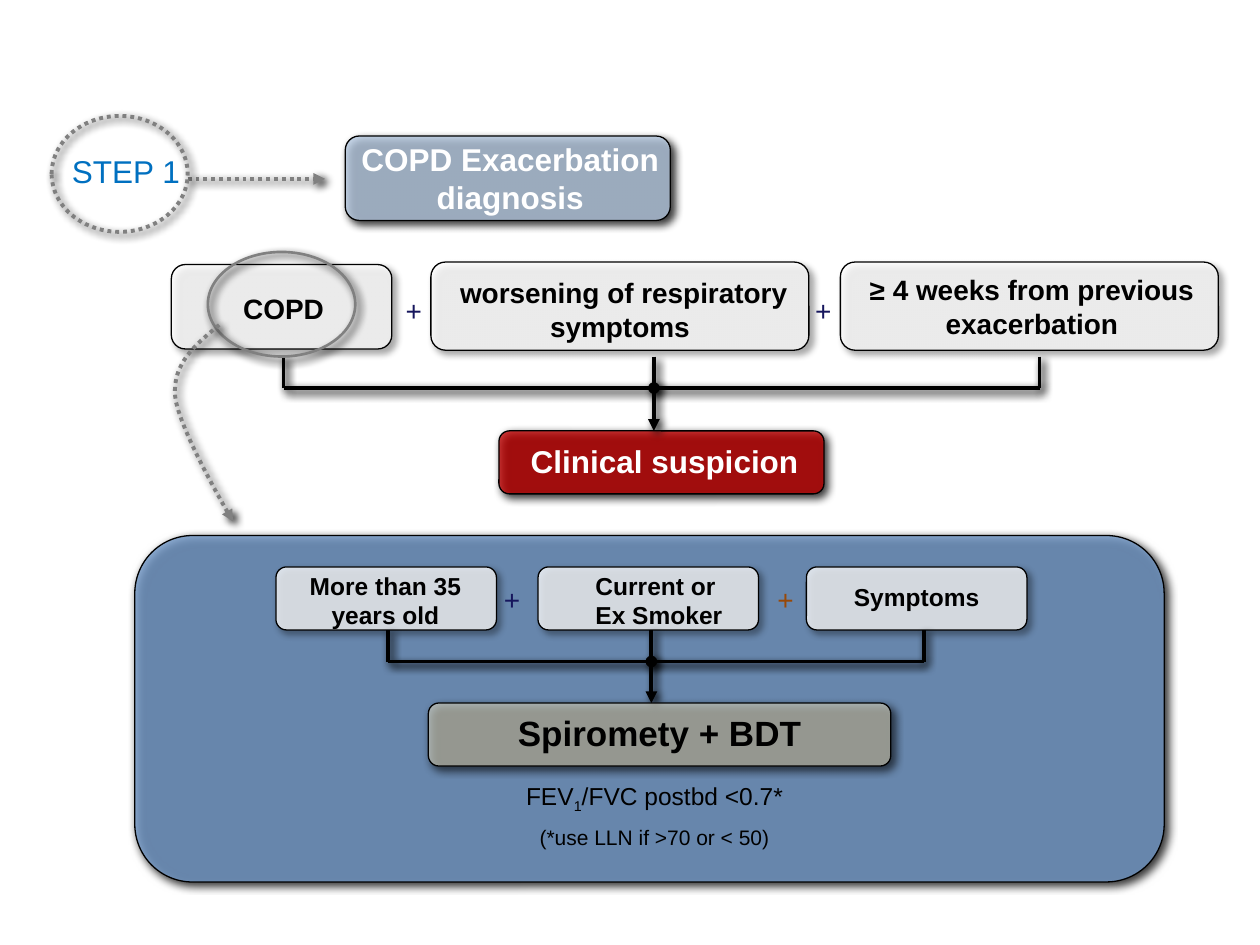
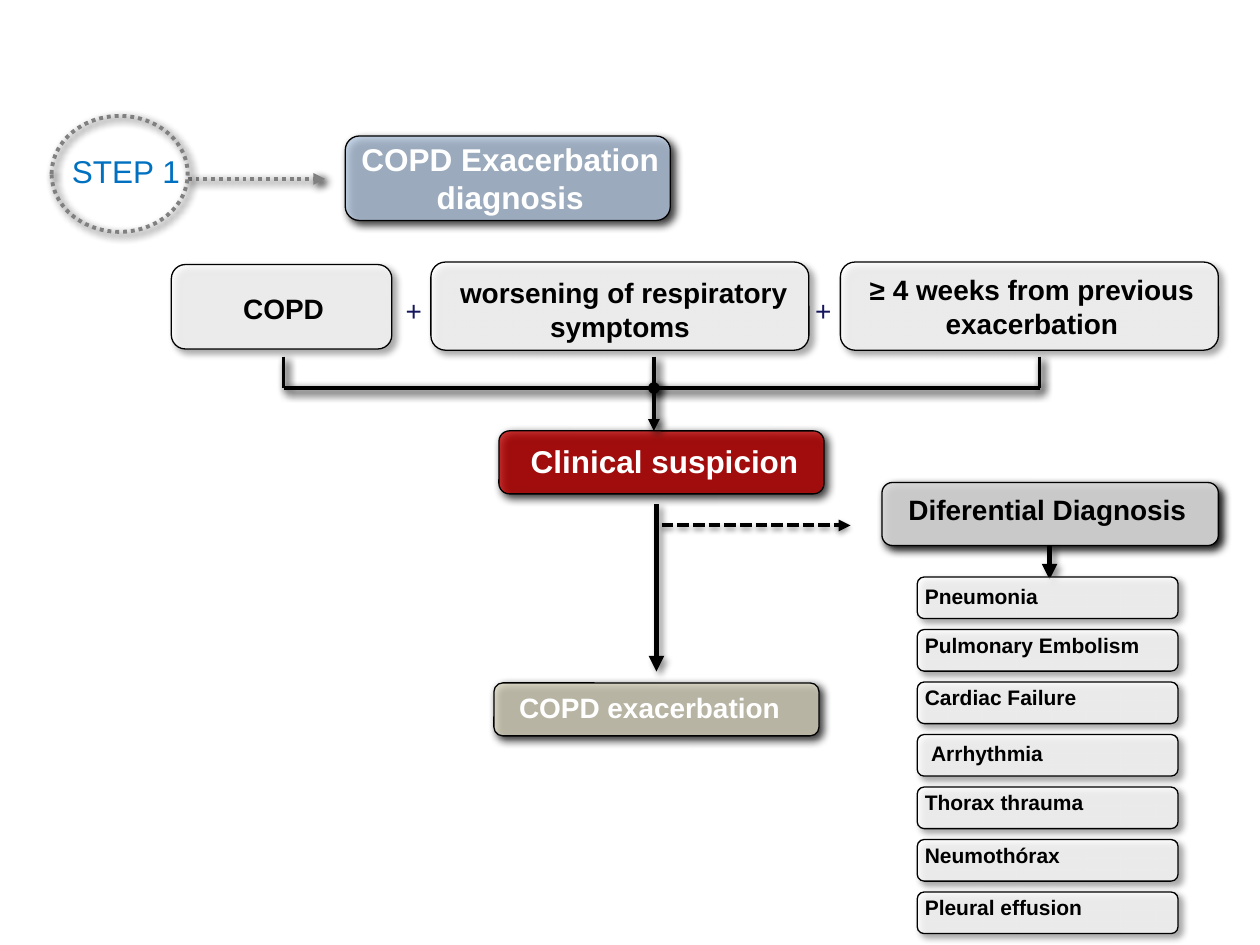
"""Build two slides on the diagnosis of a COPD exacerbation."""
from dataclasses import dataclass
from typing import NamedTuple, Optional

from lxml.etree import SubElement
from pptx import Presentation
from pptx.dml.color import RGBColor
from pptx.enum.dml import MSO_LINE
from pptx.enum.shapes import MSO_CONNECTOR, MSO_SHAPE
from pptx.enum.text import MSO_ANCHOR, MSO_AUTO_SIZE, PP_ALIGN
from pptx.oxml.ns import qn
from pptx.util import Inches, Pt


class Shadow(NamedTuple):
    alpha: int
    blur: float
    distance: float
    angle: int


class Fill(NamedTuple):
    color: str
    alpha: int


class Area(NamedTuple):
    left: float
    top: float
    width: float
    height: float

    def lengths(self) -> list:
        return [Inches(value) for value in self]


class Point(NamedTuple):
    x: float
    y: float


@dataclass(frozen=True)
class Theme:
    font: str = "Arial"
    black: str = "000000"
    white: str = "FFFFFF"
    gray: str = "808080"
    step: str = "0070C0"
    plus: str = "16165D"
    plus_warm: str = "984807"
    light: Fill = Fill("FFFFFF", 77)
    heading: Fill = Fill("B9CDE5", 77)
    suspicion: Fill = Fill("C00000", 77)
    panel: Fill = Fill("759CCC", 79)
    spirometry: Fill = Fill("DDD9C3", 60)
    exacerbation: Fill = Fill("DDD9C3", 77)
    differential: Fill = Fill("D9D9D9", 92)
    strong: Shadow = Shadow(100, 5, 2.8, 45)
    soft: Shadow = Shadow(43, 4, 3, 45)
    below: Shadow = Shadow(38, 3.1, 1.6, 90)
    display: int = 20
    large: int = 18
    medium: int = 16
    small: int = 14
    tiny: int = 12
    outline: float = 0.75
    ring: float = 1.5
    stroke: float = 2.25
    heavy: float = 3


THEME = Theme()


@dataclass(frozen=True)
class Label:
    text: str
    area: Area
    size: int = THEME.medium
    color: str = THEME.black
    bold: bool = True
    align: Optional[PP_ALIGN] = PP_ALIGN.CENTER


@dataclass(frozen=True)
class Card:
    area: Area
    label: Label
    fill: Fill = THEME.light
    shadow: Shadow = THEME.soft


@dataclass(frozen=True)
class Junction:
    stems: tuple[float, float, float]
    top: float
    bar: float
    tip: float


@dataclass(frozen=True)
class Finding:
    name: str
    dx: float = -0.03
    dy: float = -0.03


def plus(left: float, top: float, color: str = THEME.plus) -> Label:
    return Label("+", Area(left, top, 0.33, 0.36), color=color, bold=False, align=None)


TITLE_AREA = Area(2.74, 1.08, 2.58, 0.67)
TITLE = Label("COPD Exacerbation diagnosis", Area(2.76, 1.06, 2.58, 0.69), THEME.large, THEME.white)
STEP = Label("STEP 1", Area(0.05, 1.16, 1.9, 0.4), THEME.large, THEME.step, False)
SUSPICION = Card(Area(3.96, 3.42, 2.58, 0.5),
                 Label("Clinical suspicion", Area(4.1, 3.46, 2.35, 0.39), THEME.large, THEME.white),
                 THEME.suspicion, THEME.strong)
CRITERIA = [
    Card(Area(1.36, 2.1, 1.75, 0.67), Label("COPD", Area(1.84, 2.26, 1.08, 0.36), align=None)),
    Card(Area(3.42, 2.08, 3, 0.7),
         Label(" worsening of respiratory symptoms", Area(3.38, 2.13, 3.08, 0.63))),
    Card(Area(6.67, 2.08, 3, 0.7),
         Label("≥ 4 weeks from previous exacerbation", Area(6.81, 2.11, 2.76, 0.63))),
]
CRITERIA_PLUSES = [plus(3.13, 2.28), plus(6.38, 2.28)]
CRITERIA_JUNCTION = Junction((2.25, 5.19, 8.25), 2.83, 3.08, 3.42)

RISKS = [
    Card(Area(2.19, 4.5, 1.75, 0.5),
         Label("More than 35 years old", Area(2.16, 4.48, 1.8, 0.56), THEME.small)),
    Card(Area(4.27, 4.5, 1.75, 0.5),
         Label("Current or \nEx Smoker", Area(4.1, 4.48, 2.26, 0.56), THEME.small)),
    Card(Area(6.4, 4.5, 1.75, 0.5),
         Label("Symptoms", Area(6.44, 4.57, 1.67, 0.32), THEME.small)),
]
RISK_PLUSES = [plus(3.91, 4.57), plus(6.08, 4.57, THEME.plus_warm)]
RISK_JUNCTION = Junction((3.08, 5.17, 7.33), 5, 5.25, 5.58)
SPIROMETRY = Card(Area(3.4, 5.58, 3.67, 0.5),
                  Label("Spiromety + BDT", Area(3.57, 5.59, 3.33, 0.43), THEME.display),
                  THEME.spirometry, THEME.strong)
COPD_CURVE = [
    (Point(1.74, 2.58), Point(1.56, 2.73), Point(1.37, 2.88), Point(1.39, 3.14)),
    (Point(1.39, 3.14), Point(1.41, 3.4), Point(1.85, 4.14), Point(1.85, 4.14)),
]

DIFFERENTIAL = Card(Area(7, 3.83, 2.67, 0.5),
                    Label("Diferential Diagnosis", Area(7.12, 3.86, 2.42, 0.36), align=None),
                    THEME.differential, THEME.strong)
EXACERBATION = Card(Area(3.92, 5.42, 2.58, 0.42),
                    Label("COPD exacerbation", Area(4.03, 5.43, 2.35, 0.36), color=THEME.white, align=None),
                    THEME.exacerbation, THEME.strong)
FINDINGS = [Finding("Pneumonia", dy=0), Finding("Pulmonary Embolism"), Finding("Cardiac Failure"),
            Finding("Arrhythmia", 0.02, 0), Finding("Thorax thrauma"), Finding("Neumothórax"),
            Finding("Pleural effusion")]
FINDINGS_TOP, FINDINGS_PITCH = 4.58, 5 / 12


def cast_shadow(shape, shadow: Shadow) -> None:
    effects = SubElement(shape._element.spPr, qn("a:effectLst"))
    outer = SubElement(effects, qn("a:outerShdw"), blurRad=str(Pt(shadow.blur)),
                       dist=str(Pt(shadow.distance)), dir=str(shadow.angle * 60000),
                       algn="ctr", rotWithShape="0")
    tint = SubElement(outer, qn("a:srgbClr"), val=THEME.black)
    SubElement(tint, qn("a:alpha"), val=str(shadow.alpha * 1000))


def style_line(shape, color: str, width: float, dash=None, start: str = "", end: str = "") -> None:
    shape.line.color.rgb = RGBColor.from_string(color)
    shape.line.width = Pt(width)
    if dash is not None:
        shape.line.dash_style = dash
    outline = shape._element.spPr.get_or_add_ln()
    for tag, kind in (("a:headEnd", start), ("a:tailEnd", end)):
        if kind:
            SubElement(outline, qn(tag), type=kind)


def style_run(run, size: int, color: str, bold: bool) -> None:
    run.font.name = THEME.font
    run.font.size = Pt(size)
    run.font.bold = bold
    run.font.color.rgb = RGBColor.from_string(color)


def set_label(holder, label: Label, margins=(0.09, 0.04), anchor=MSO_ANCHOR.BOTTOM) -> None:
    holder.left, holder.top, holder.width, holder.height = label.area.lengths()
    frame = holder.text_frame
    frame.text = label.text
    frame.word_wrap = True
    frame.auto_size = MSO_AUTO_SIZE.SHAPE_TO_FIT_TEXT
    frame.vertical_anchor = anchor
    frame.margin_left = frame.margin_right = Inches(margins[0])
    frame.margin_top = frame.margin_bottom = Inches(margins[1])
    for paragraph in frame.paragraphs:
        paragraph.alignment = label.align or PP_ALIGN.LEFT
        for run in paragraph.runs:
            style_run(run, label.size, label.color, label.bold)


def add_label(slide, label: Label, **layout):
    holder = slide.shapes.add_textbox(*label.area.lengths())
    set_label(holder, label, **layout)
    return holder


def add_box(slide, area: Area, fill: Fill, shadow: Shadow) -> None:
    box = slide.shapes.add_shape(MSO_SHAPE.ROUNDED_RECTANGLE, *area.lengths())
    box.fill.solid()
    box.fill.fore_color.rgb = RGBColor.from_string(fill.color)
    tint = box._element.spPr.find(qn("a:solidFill")).find(qn("a:srgbClr"))
    SubElement(tint, qn("a:alpha"), val=str(fill.alpha * 1000))
    style_line(box, THEME.black, THEME.outline)
    cast_shadow(box, shadow)


def add_card(slide, card: Card) -> None:
    add_box(slide, card.area, card.fill, card.shadow)
    add_label(slide, card.label)


def add_ring(slide, area: Area, width: float, dash=None) -> None:
    ring = slide.shapes.add_shape(MSO_SHAPE.OVAL, *area.lengths())
    ring.fill.background()
    style_line(ring, THEME.gray, width, dash)
    cast_shadow(ring, THEME.strong)


def add_line(slide, begin: Point, finish: Point, color: str = THEME.black, width: float = THEME.stroke,
             shadow: Shadow = THEME.strong, **style) -> None:
    line = slide.shapes.add_connector(MSO_CONNECTOR.STRAIGHT, *map(Inches, (*begin, *finish)))
    style_line(line, color, width, **style)
    cast_shadow(line, shadow)


def add_junction(slide, joint: Junction) -> None:
    first, middle, last = joint.stems
    add_line(slide, Point(first, joint.bar), Point(last, joint.bar))
    for stem in joint.stems:
        add_line(slide, Point(stem, joint.top), Point(stem, joint.bar))
    add_line(slide, Point(middle, joint.bar), Point(middle, joint.tip), start="oval", end="triangle")


def add_curve(slide, pieces: list, steps: int = 16) -> None:
    spots = [pieces[0][0]]
    for a, b, c, d in pieces:
        for step in range(1, steps + 1):
            t = step / steps
            u = 1 - t
            spots.append(Point(*(u**3 * p + 3 * u * u * t * q + 3 * u * t * t * r + t**3 * s
                                 for p, q, r, s in zip(a, b, c, d))))
    start, *others = [(Inches(spot.x), Inches(spot.y)) for spot in spots]
    builder = slide.shapes.build_freeform(*start)
    builder.add_line_segments(others, close=False)
    curve = builder.convert_to_shape()
    curve.fill.background()
    style_line(curve, THEME.gray, THEME.stroke, MSO_LINE.ROUND_DOT, end="triangle")
    cast_shadow(curve, THEME.strong)


def add_ratio_note(slide) -> None:
    note = Label("\n(*use LLN if >70 or < 50)", Area(3.57, 6.15, 3.25, 0.63), THEME.tiny, bold=False)
    frame = add_label(slide, note, margins=(0.1, 0.05), anchor=MSO_ANCHOR.TOP).text_frame
    ratio = frame.paragraphs[0]
    ratio.space_after = Pt(6)
    for text, baseline in (("FEV", 0), ("1", -25000), ("/FVC postbd <0.7*", 0)):
        run = ratio.add_run()
        run.text = text
        style_run(run, THEME.small, THEME.black, False)
        run.font._element.set("baseline", str(baseline))


def start_slide(deck):
    slide = deck.slides.add_slide(deck.slide_layouts[5])
    add_label(slide, STEP, margins=(0.1, 0.05), anchor=MSO_ANCHOR.TOP)
    add_box(slide, TITLE_AREA, THEME.heading, THEME.strong)
    title = slide.shapes.title
    set_label(title, TITLE)
    title._element.getparent().append(title._element)
    add_line(slide, Point(1.49, 1.42), Point(2.58, 1.42), THEME.gray, dash=MSO_LINE.ROUND_DOT, end="triangle")
    add_ring(slide, Area(0.41, 0.92, 1.08, 0.92), THEME.stroke, MSO_LINE.ROUND_DOT)
    add_stage(slide, [SUSPICION, *CRITERIA], CRITERIA_PLUSES, CRITERIA_JUNCTION)
    return slide


def add_stage(slide, cards: list[Card], pluses: list[Label], joint: Junction) -> None:
    for card in cards:
        add_card(slide, card)
    for sign in pluses:
        add_label(slide, sign)
    add_junction(slide, joint)


def add_spirometry_slide(deck) -> None:
    slide = start_slide(deck)
    add_ring(slide, Area(1.65, 2, 1.17, 0.83), THEME.ring)
    add_curve(slide, COPD_CURVE)
    add_box(slide, Area(1.07, 4.25, 8.17, 2.75), THEME.panel, THEME.strong)
    add_stage(slide, RISKS, RISK_PLUSES, RISK_JUNCTION)
    add_ratio_note(slide)
    add_card(slide, SPIROMETRY)


def add_differential_slide(deck) -> None:
    slide = start_slide(deck)
    add_line(slide, Point(5.25, 4.17), Point(6.75, 4.17), shadow=THEME.below,
             dash=MSO_LINE.SQUARE_DOT, end="triangle")
    add_card(slide, DIFFERENTIAL)
    add_card(slide, EXACERBATION)
    for begin, finish in ((Point(5.21, 4), Point(5.21, 5.33)), (Point(8.33, 4.33), Point(8.33, 4.6))):
        add_line(slide, begin, finish, width=THEME.heavy, shadow=THEME.soft, end="triangle")
    for row, finding in enumerate(FINDINGS):
        area = Area(7.28, FINDINGS_TOP + row * FINDINGS_PITCH, 2.07, 0.33)
        place = Area(area.left + finding.dx, area.top + finding.dy, 2.13, 0.29)
        add_card(slide, Card(area, Label(finding.name, place, THEME.tiny, align=None)))


def main() -> None:
    deck = Presentation()
    deck.slide_width, deck.slide_height = Inches(10), Inches(7.5)
    add_spirometry_slide(deck)
    add_differential_slide(deck)
    deck.save("out.pptx")


if __name__ == "__main__":
    main()
